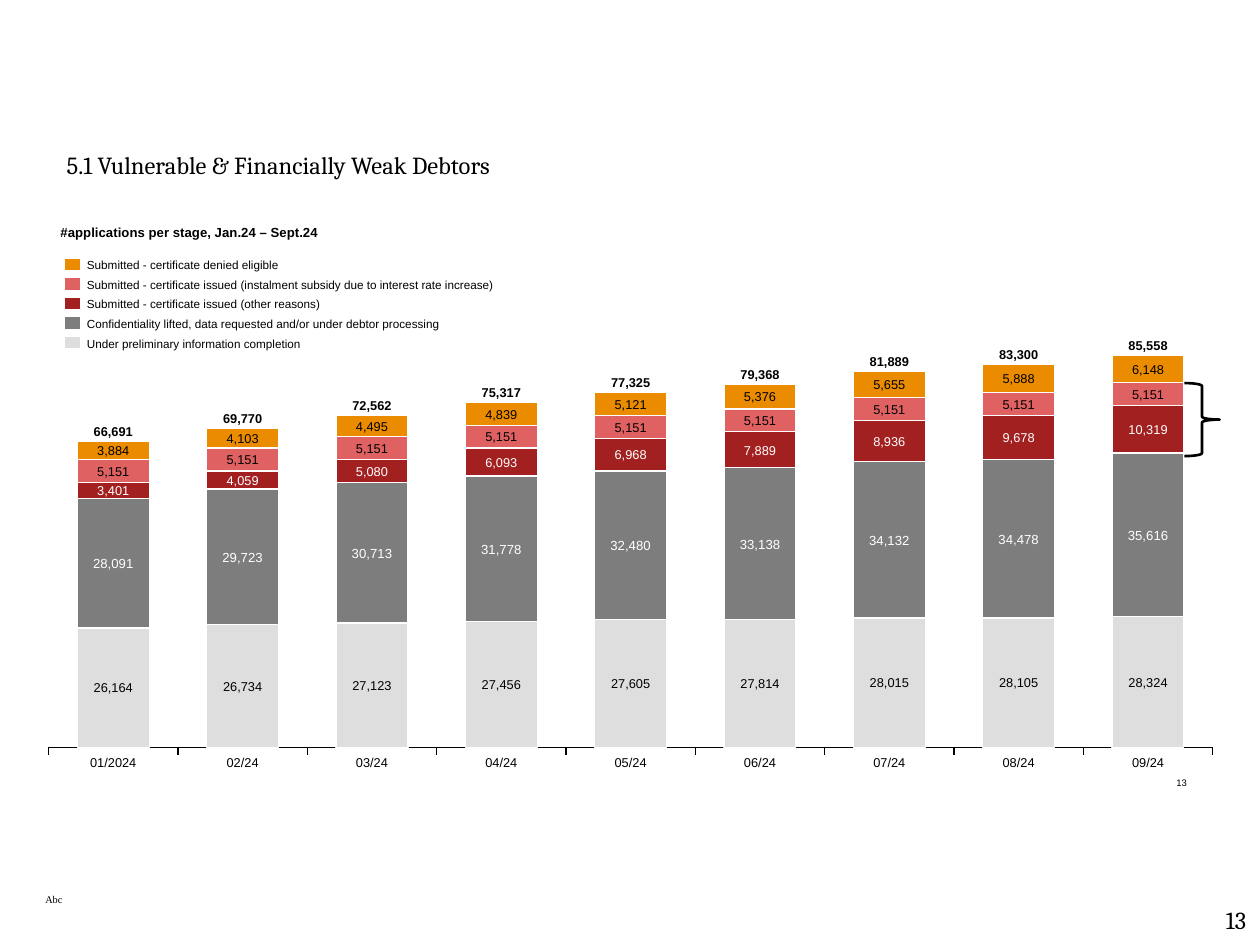
from dataclasses import dataclass
from itertools import accumulate

from lxml import etree
from pptx import Presentation
from pptx.chart.data import CategoryChartData
from pptx.dml.color import RGBColor
from pptx.enum.chart import XL_CHART_TYPE as ChartType, XL_TICK_LABEL_POSITION as TickLabel, XL_TICK_MARK as TickMark
from pptx.enum.shapes import MSO_SHAPE as Shape
from pptx.enum.text import MSO_ANCHOR as Anchor, PP_ALIGN as Align
from pptx.oxml.ns import qn
from pptx.util import Inches, Pt


@dataclass(frozen=True)
class Theme:
    black: str = "000000"
    white: str = "FFFFFF"
    sans: str = "Arial"
    serif: str = "Cambria"
    roman: str = "Times New Roman"
    title: float = 14
    subtitle: float = 7.5
    label: float = 7.3
    legend: float = 6.7
    footer: float = 5.9
    small: float = 5.4
    line: float = 0.75


THEME = Theme()

MONTHS = ["01/2024", "02/24", "03/24", "04/24", "05/24", "06/24", "07/24", "08/24", "09/24"]

STAGES = [
    {"name": "Under preliminary information completion",
     "fill": "DEDEDE", "ink": THEME.black, "size": THEME.label,
     "heights": [73, 75, 76, 77, 78, 78, 79, 79, 80],
     "counts": [26164, 26734, 27123, 27456, 27605, 27814, 28015, 28105, 28324]},
    {"name": "Confidentiality lifted, data requested and/or under debtor processing",
     "fill": "7D7D7D", "ink": THEME.white, "size": THEME.subtitle,
     "heights": [79, 83, 86, 89, 91, 93, 96, 97, 100],
     "counts": [28091, 29723, 30713, 31778, 32480, 33138, 34132, 34478, 35616]},
    {"name": "Submitted - certificate issued (other reasons)",
     "fill": "A32020", "ink": THEME.white, "size": THEME.label,
     "heights": [10, 11, 14, 17, 20, 22, 25, 27, 29],
     "counts": [3401, 4059, 5080, 6093, 6968, 7889, 8936, 9678, 10319]},
    {"name": "Submitted - certificate issued (instalment subsidy due to interest rate increase)",
     "fill": "E06161", "ink": THEME.black, "size": THEME.label,
     "heights": [14] * 9,
     "counts": [5151] * 9},
    {"name": "Submitted - certificate denied eligible",
     "fill": "EB8C00", "ink": THEME.black, "size": THEME.label,
     "heights": [11, 12, 13, 14, 14, 15, 16, 17, 17],
     "counts": [3884, 4103, 4495, 4839, 5121, 5376, 5655, 5888, 6148]},
]

CHART = (0.32, 2.75, 9.37, 3.25)
PLOT = {"x": 0.007, "y": 0.021, "w": 0.986, "h": 0.958}
AXIS_MAX = 240
LABEL_WIDTH, LABEL_HEIGHT = 0.38, 0.12
LEGEND_TOP, LEGEND_STEP = 2.05, 0.155


def color(code):
    return RGBColor.from_string(code)


def add_text(page, place, text, size, ink=THEME.black, font=THEME.sans, bold=False,
             align=Align.LEFT, anchor=Anchor.TOP, margins=(0, 0, 0, 0), wrap=False, spacing=None):
    box = page.shapes.add_textbox(*map(Inches, place))
    frame = box.text_frame
    frame.word_wrap = wrap
    frame.vertical_anchor = anchor
    frame.margin_left, frame.margin_top, frame.margin_right, frame.margin_bottom = map(Inches, margins)
    para = frame.paragraphs[0]
    para.text = text
    para.alignment = align
    para.line_spacing = spacing
    para.font.name = font
    para.font.size = Pt(size)
    para.font.bold = bold
    para.font.color.rgb = color(ink)


def add_stage_chart(page):
    data = CategoryChartData()
    data.categories = [str(number) for number in range(1, len(MONTHS) + 1)]
    for number, stage in enumerate(STAGES, 1):
        data.add_series(f"Series {number}", stage["heights"])
    chart = page.shapes.add_chart(ChartType.COLUMN_STACKED, *map(Inches, CHART), data).chart
    chart.has_legend = False
    chart.has_title = False
    chart.font.name = THEME.roman
    chart.font.size = Pt(10)
    chart.font.color.rgb = color(THEME.black)

    months = chart.category_axis
    months.tick_label_position = TickLabel.NONE
    months.major_tick_mark = TickMark.OUTSIDE
    months.format.line.color.rgb = color(THEME.black)
    months.format.line.width = Pt(THEME.line)
    values = chart.value_axis
    values.minimum_scale, values.maximum_scale = 0, AXIS_MAX
    values.has_major_gridlines = False
    values.visible = False

    bars = chart.plots[0]
    bars.gap_width, bars.overlap = 80, 100
    bars.vary_by_categories = False
    for series, stage in zip(bars.series, STAGES):
        series.format.fill.solid()
        series.format.fill.fore_color.rgb = color(stage["fill"])
        series.format.line.color.rgb = color(THEME.white)
        series.format.line.width = Pt(THEME.line)

    area = chart.plots[0]._element.getparent()
    for old in area.findall(qn("c:layout")):
        area.remove(old)
    layout = etree.Element(qn("c:layout"))
    area.insert(0, layout)
    manual = etree.SubElement(layout, qn("c:manualLayout"))
    settings = {"layoutTarget": "inner", "xMode": "edge", "yMode": "edge", **PLOT}
    for tag, value in settings.items():
        etree.SubElement(manual, qn(f"c:{tag}")).set("val", str(value))


def add_bar_labels(page):
    left, top, width, height = CHART
    step = width * PLOT["w"] / len(MONTHS)
    first = left + width * PLOT["x"] + step / 2
    base = top + height * (PLOT["y"] + PLOT["h"])
    scale = height * PLOT["h"] / AXIS_MAX

    for column, month in enumerate(MONTHS):
        x = first + column * step - LABEL_WIDTH / 2

        def label(y, text, size=THEME.label, **style):
            add_text(page, (x, y, LABEL_WIDTH, LABEL_HEIGHT), text, size, align=Align.CENTER, **style)

        tops = list(accumulate(stage["heights"][column] for stage in STAGES))
        for stage, end in zip(STAGES, tops):
            middle = base - (end - stage["heights"][column] / 2) * scale
            label(middle - LABEL_HEIGHT / 2, f"{stage['counts'][column]:,}", stage["size"],
                  ink=stage["ink"], anchor=Anchor.MIDDLE)
        total = sum(stage["counts"][column] for stage in STAGES)
        label(base - tops[-1] * scale - LABEL_HEIGHT - 0.02, f"{total:,}", bold=True, anchor=Anchor.BOTTOM)
        label(5.99, month)


def add_legend(page):
    for row, stage in enumerate(reversed(STAGES)):
        y = LEGEND_TOP + row * LEGEND_STEP
        swatch = page.shapes.add_shape(Shape.RECTANGLE, *map(Inches, (0.51, y, 0.13, 0.1)))
        swatch.shadow.inherit = False
        swatch.fill.solid()
        swatch.fill.fore_color.rgb = color(stage["fill"])
        swatch.line.color.rgb = color(THEME.white)
        swatch.line.width = Pt(THEME.line)
        add_text(page, (0.69, y, 3.6, 0.11), stage["name"], THEME.legend, anchor=Anchor.MIDDLE)


def add_brace(page):
    brace = page.shapes.add_shape(Shape.RIGHT_BRACE, *map(Inches, (9.4, 3.04, 0.28, 0.58)))
    brace.shadow.inherit = False
    brace.fill.background()
    brace.line.color.rgb = color(THEME.black)
    brace.line.width = Pt(1.5)


def main():
    deck = Presentation()
    deck.slide_width, deck.slide_height = Inches(10), Inches(7.5)
    page = deck.slides.add_slide(deck.slide_layouts[6])
    add_text(page, (0.36, 7.09, 2.43, 0.1), "Abc", THEME.footer, font=THEME.roman, wrap=True)
    add_stage_chart(page)
    add_bar_labels(page)
    add_legend(page)
    add_text(page, (0.53, 1.23, 8.96, 0.24), "5.1 Vulnerable & Financially Weak Debtors",
             THEME.title, font=THEME.serif, wrap=True, spacing=0.85)
    add_text(page, (8.04, 6.15, 1.38, 0.11), "13", THEME.small,
             align=Align.RIGHT, anchor=Anchor.BOTTOM, wrap=True)
    add_text(page, (0.48, 1.73, 8.59, 0.24), "#applications per stage, Jan.24 – Sept.24",
             THEME.subtitle, bold=True, margins=(0, 0.05, 0.08, 0.05), wrap=True)
    add_text(page, (8.22, 7.18, 1.67, 0.29), "13", THEME.title,
             font=THEME.serif, align=Align.RIGHT, wrap=True)
    add_brace(page)
    deck.save("out.pptx")


if __name__ == "__main__":
    main()
